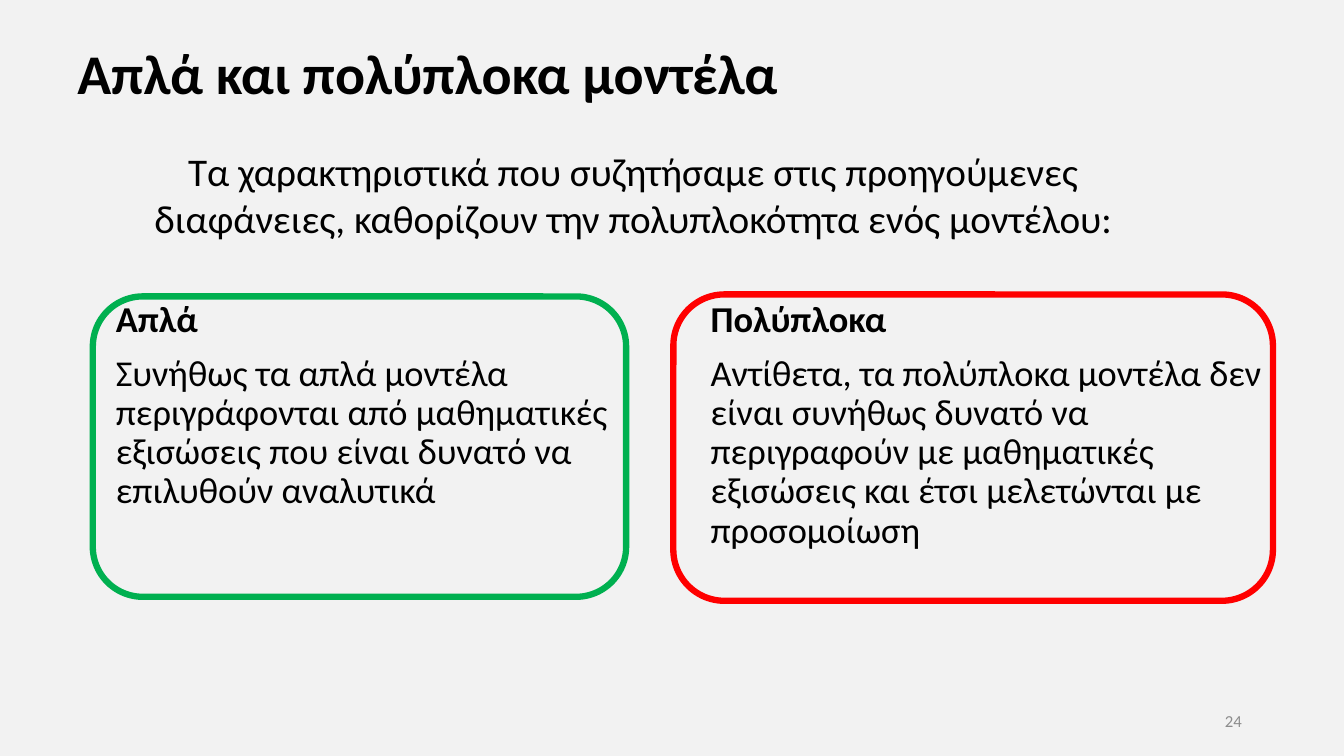
"""Builds the slide that compares simple and complex models."""
from dataclasses import dataclass

from pptx import Presentation
from pptx.dml.color import RGBColor
from pptx.enum.shapes import MSO_SHAPE
from pptx.enum.text import MSO_ANCHOR, PP_ALIGN
from pptx.slide import Slide
from pptx.util import Cm, Pt

ROUNDED = MSO_SHAPE.ROUNDED_RECTANGLE
TOP, MIDDLE = MSO_ANCHOR.TOP, MSO_ANCHOR.MIDDLE
LEFT, CENTER, RIGHT = PP_ALIGN.LEFT, PP_ALIGN.CENTER, PP_ALIGN.RIGHT


@dataclass(frozen=True)
class Theme:
    font: str = "Calibri"
    background: str = "F2F2F2"
    ink: str = "000000"
    muted: str = "8C8C8C"
    simple: str = "00B050"
    complex: str = "FF0000"
    title_size: float = 40
    intro_size: float = 28
    body_size: float = 26
    number_size: float = 12
    frame_weight: float = 4.5


THEME = Theme()


@dataclass(frozen=True)
class Box:
    left: float
    top: float
    width: float
    height: float

    def lengths(self) -> tuple[Cm, Cm, Cm, Cm]:
        return Cm(self.left), Cm(self.top), Cm(self.width), Cm(self.height)


@dataclass(frozen=True)
class Line:
    text: str
    size: float
    bold: bool = False
    color: str = THEME.ink
    align: PP_ALIGN = LEFT
    spacing: float = 1.0
    before: float = 0


@dataclass(frozen=True)
class Model:
    heading: str
    description: str
    frame: Box
    color: str


TITLE_BOX = Box(1.7, 1.02, 30.48, 1.83)
INTRO_BOX = Box(2.39, 3.58, 27.13, 3.43)
NUMBER_BOX = Box(23.93, 17.65, 7.62, 1.02)
FIRST_COLUMN = Box(2.67, 7.47, 14.53, 7.57)
COLUMN_STEP = 14.99

TITLE = Line("Απλά και πολύπλοκα μοντέλα", THEME.title_size, bold=True, spacing=0.9)
INTRO = Line(
    "Τα χαρακτηριστικά που συζητήσαμε στις προηγούμενες διαφάνειες, "
    "καθορίζουν την πολυπλοκότητα ενός μοντέλου:",
    THEME.intro_size,
    align=CENTER,
)
NUMBER = Line("24", THEME.number_size, color=THEME.muted, align=RIGHT)
MODELS = (
    Model(
        "Απλά",
        "Συνήθως τα απλά μοντέλα περιγράφονται από μαθηματικές εξισώσεις "
        "που είναι δυνατό να επιλυθούν αναλυτικά",
        Box(2.34, 7.47, 13.44, 7.57),
        THEME.simple,
    ),
    Model(
        "Πολύπλοκα",
        "Αντίθετα, τα πολύπλοκα μοντέλα δεν είναι συνήθως δυνατό να περιγραφούν "
        "με μαθηματικές εξισώσεις και έτσι μελετώνται με προσομοίωση",
        Box(16.97, 7.42, 15.11, 7.72),
        THEME.complex,
    ),
)


def apply_format(target: object, values: dict[str, object]) -> None:
    """Set each named attribute of the target."""
    for name, value in values.items():
        setattr(target, name, value)


def add_text(slide: Slide, box: Box, lines: list[Line], anchor: MSO_ANCHOR = TOP) -> None:
    """Add a wrapped text box with one paragraph per line."""
    frame = slide.shapes.add_textbox(*box.lengths()).text_frame
    apply_format(frame, {"word_wrap": True, "vertical_anchor": anchor})
    for index, line in enumerate(lines):
        paragraph = frame.add_paragraph() if index else frame.paragraphs[0]
        apply_format(paragraph, {
            "alignment": line.align,
            "line_spacing": line.spacing,
            "space_before": Pt(line.before),
        })
        run = paragraph.add_run()
        run.text = line.text
        apply_format(run.font, {"name": THEME.font, "size": Pt(line.size), "bold": line.bold})
        run.font.color.rgb = RGBColor.from_string(line.color)


def add_frame(slide: Slide, model: Model) -> None:
    """Add the rounded outline around a model."""
    outline = slide.shapes.add_shape(ROUNDED, *model.frame.lengths())
    outline.shadow.inherit = False
    outline.fill.background()
    outline.line.width = Pt(THEME.frame_weight)
    outline.line.color.rgb = RGBColor.from_string(model.color)


def add_model(slide: Slide, model: Model, column: int) -> None:
    """Add the heading and description of a model in its column."""
    first = FIRST_COLUMN
    box = Box(first.left + column * COLUMN_STEP, first.top, first.width, first.height)
    add_text(slide, box, [
        Line(model.heading, THEME.body_size, bold=True, spacing=0.9),
        Line(model.description, THEME.body_size, spacing=0.9, before=10),
    ])


def main() -> None:
    """Build and save the presentation."""
    deck = Presentation()
    apply_format(deck, {"slide_width": Cm(33.87), "slide_height": Cm(19.05)})
    slide = deck.slides.add_slide(deck.slide_layouts[6])
    slide.background.fill.solid()
    slide.background.fill.fore_color.rgb = RGBColor.from_string(THEME.background)
    add_text(slide, TITLE_BOX, [TITLE], MIDDLE)
    add_text(slide, INTRO_BOX, [INTRO])
    add_text(slide, NUMBER_BOX, [NUMBER], MIDDLE)
    for column, model in enumerate(MODELS):
        add_model(slide, model, column)
        add_frame(slide, model)
    deck.save("out.pptx")


if __name__ == "__main__":
    main()
